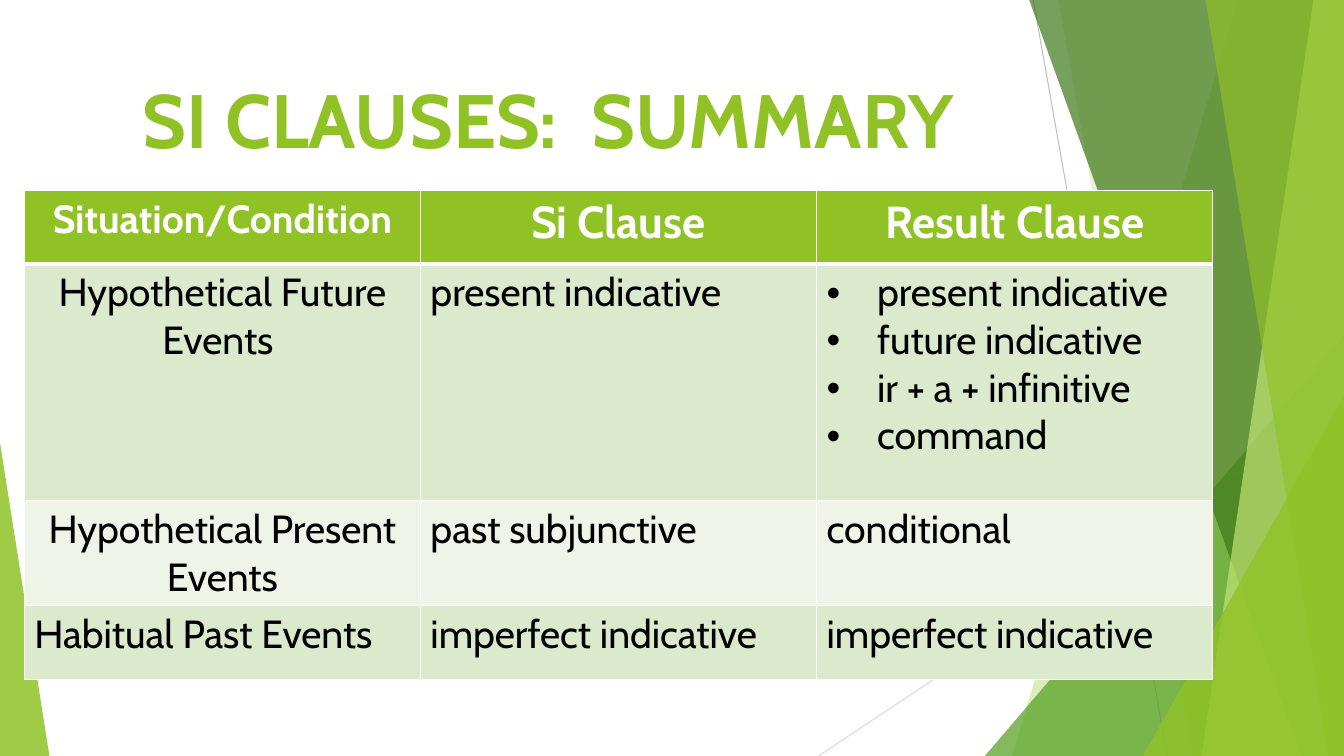
import lxml.etree
import pptx
import pptx.dml.color
import pptx.enum.shapes
import pptx.enum.text
import pptx.oxml.ns
import pptx.util

COLOURS = {
    "white": "FFFFFF", "black": "000000", "lime": "90C226", "green": "54A021",
    "forest": "3F7819", "pale": "C0E474", "silver": "BFBFBF", "mist": "D9D9D9",
    "row_dark": "DBE9CD", "row_light": "EEF4E8",
}
FONT = "Cabin"
WIDTH = pptx.util.Inches(13.33)
HEIGHT = pptx.util.Inches(7.5)
CENTER = pptx.enum.text.PP_ALIGN.CENTER
LEFT = pptx.enum.text.PP_ALIGN.LEFT

LINES = [(76.88, 0, 86.85, 100, "silver"), (100, 53.73, 60.9, 100, "mist")]
BACK_BANDS = [(92.1, 75.3, "lime", 30), (78.75, 88.73, "lime", 20)]
FRONT_BANDS = [(76.58, 96.83, "forest", 70), (97.73, 89.4, "pale", 70),
               (89.7, 98.85, "lime", 65)]
HEADINGS = [("Situation/Condition", 28), ("Si Clause", 32), ("Result Clause", 32)]
RESULTS = ["present indicative", "future indicative", "ir + a + infinitive", "command"]
BODY = [
    ("Hypothetical Future Events ", CENTER, "present indicative", RESULTS, "row_dark"),
    ("Hypothetical Present Events", CENTER, "past subjunctive", ["conditional"], "row_light"),
    ("Habitual Past Events", LEFT, "imperfect indicative", ["imperfect indicative"], "row_dark"),
]
COLUMN_SHARE = 29.48
ROW_SHARES = [9.73, 31.33, 13.87, 9.73]


def across(percent):
    return round(WIDTH * percent / 100)


def down(percent):
    return round(HEIGHT * percent / 100)


def colour(name):
    return pptx.dml.color.RGBColor.from_string(COLOURS[name])


def add_xml(parent, tag, **attributes):
    return lxml.etree.SubElement(parent, pptx.oxml.ns.qn(tag), attributes)


def paint(shape, name, opacity):
    shape.shadow.inherit = False
    shape.fill.solid()
    shape.fill.fore_color.rgb = colour(name)
    shape.line.fill.background()
    solid = shape._element.spPr.find(pptx.oxml.ns.qn("a:solidFill"))
    add_xml(solid[0], "a:alpha", val=str(opacity * 1000))


def add_line(slide, x1, y1, x2, y2, name):
    line = slide.shapes.add_connector(
        pptx.enum.shapes.MSO_CONNECTOR.STRAIGHT,
        across(x1), down(y1), across(x2), down(y2))
    line.line.color.rgb = colour(name)
    line.line.width = pptx.util.Pt(0.75)
    add_xml(line._element.spPr, "a:effectLst")


def add_band(slide, top_x, bottom_x, name, opacity):
    builder = slide.shapes.build_freeform(across(top_x), 0)
    builder.add_line_segments([(WIDTH, 0), (WIDTH, HEIGHT), (across(bottom_x), HEIGHT)])
    paint(builder.convert_to_shape(), name, opacity)


def add_triangle(slide, left, right, top, peak, name, opacity):
    triangle = slide.shapes.add_shape(
        pptx.enum.shapes.MSO_SHAPE.ISOSCELES_TRIANGLE,
        across(left), down(top), across(right - left), down(100 - top))
    triangle.adjustments[0] = peak
    paint(triangle, name, opacity)


def write(para, text, size, name, bold=False, align=LEFT):
    para.alignment = align
    span = para.add_run()
    span.text = text
    span.font.name = FONT
    span.font.size = pptx.util.Pt(size)
    span.font.bold = bold
    span.font.color.rgb = colour(name)


def add_bullet(para):
    properties = para._p.get_or_add_pPr()
    indent = pptx.util.Inches(0.5)
    properties.set("marL", str(indent))
    properties.set("indent", str(-indent))
    add_xml(properties, "a:buFont", typeface="Arial")
    add_xml(properties, "a:buChar", char="•")


def style_cell(cell, fill, top=1, bottom=1):
    properties = cell._tc.get_or_add_tcPr()
    for tag, points in (("a:lnL", 1), ("a:lnR", 1), ("a:lnT", top), ("a:lnB", bottom)):
        border = add_xml(properties, tag, w=str(pptx.util.Pt(points)))
        add_xml(add_xml(border, "a:solidFill"), "a:srgbClr", val=COLOURS["white"])
    cell.fill.solid()
    cell.fill.fore_color.rgb = colour(fill)


def add_title(slide, text):
    box = slide.shapes.add_textbox(across(5.55), down(8.93), across(70.5), down(19.2))
    box.text_frame.word_wrap = True
    write(box.text_frame.paragraphs[0], text, 54, "lime", True, CENTER)


def add_summary(slide):
    table = slide.shapes.add_table(
        len(ROW_SHARES), len(HEADINGS), across(1.8), down(25.2),
        across(COLUMN_SHARE * len(HEADINGS)), down(sum(ROW_SHARES))).table
    for column in table.columns:
        column.width = across(COLUMN_SHARE)
    for row, share in zip(table.rows, ROW_SHARES):
        row.height = down(share)
    for index, (text, size) in enumerate(HEADINGS):
        cell = table.cell(0, index)
        style_cell(cell, "lime", bottom=3)
        write(cell.text_frame.paragraphs[0], text, size, "white", True, CENTER)
    for number, (situation, align, clause, results, fill) in enumerate(BODY, 1):
        for index, texts in enumerate(([situation], [clause], results)):
            cell = table.cell(number, index)
            style_cell(cell, fill, top=3 if number == 1 else 1)
            frame = cell.text_frame
            for order, text in enumerate(texts):
                para = frame.add_paragraph() if order else frame.paragraphs[0]
                write(para, text, 28, "black", align=LEFT if index else align)
                if len(texts) > 1:
                    add_bullet(para)


def main():
    deck = pptx.Presentation()
    deck.slide_width = WIDTH
    deck.slide_height = HEIGHT
    slide = deck.slides.add_slide(deck.slide_layouts[6])
    for line in LINES:
        add_line(slide, *line)
    for band in BACK_BANDS:
        add_band(slide, *band)
    add_triangle(slide, 73.28, 100, 44.4, 1, "green", 72)
    for band in FRONT_BANDS:
        add_band(slide, *band)
    add_triangle(slide, 85.05, 100, 52.4, 1, "lime", 80)
    add_triangle(slide, 0, 3.68, 58.53, 0, "lime", 85)
    add_title(slide, "SI CLAUSES:  SUMMARY")
    add_summary(slide)
    deck.save("out.pptx")


if __name__ == "__main__":
    main()
